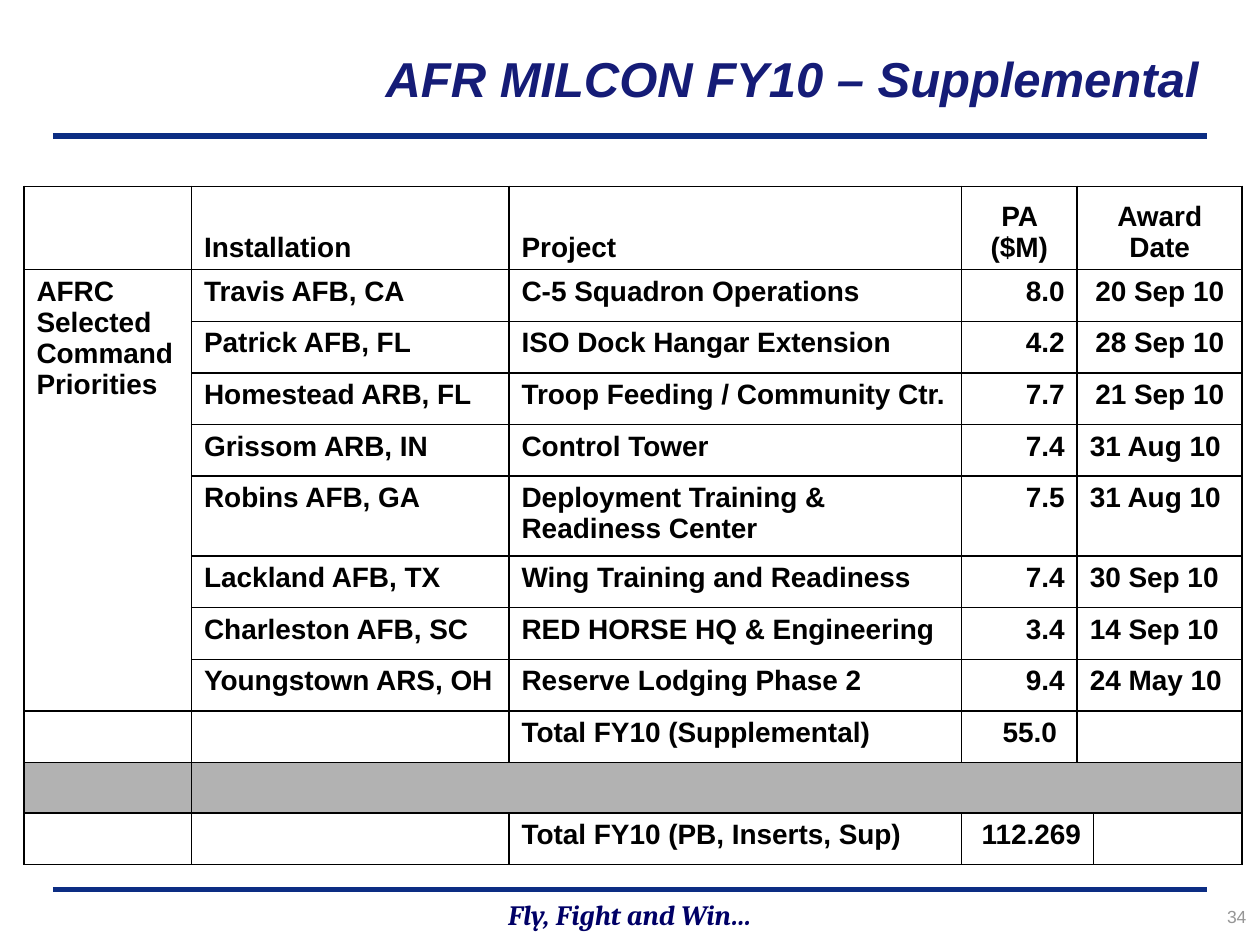
from lxml import etree
from pptx import Presentation
from pptx.dml.color import RGBColor
from pptx.enum.shapes import MSO_CONNECTOR
from pptx.enum.text import MSO_ANCHOR, PP_ALIGN
from pptx.oxml.ns import qn
from pptx.util import Inches, Pt

LEFT, CENTER, RIGHT = PP_ALIGN.LEFT, PP_ALIGN.CENTER, PP_ALIGN.RIGHT
TOP, MIDDLE, BOTTOM = MSO_ANCHOR.TOP, MSO_ANCHOR.MIDDLE, MSO_ANCHOR.BOTTOM

# Content
TITLE = "AFR MILCON FY10 – Supplemental"
MOTTO = "Fly, Fight and Win…"
PAGE_NUMBER = "34"
HEADERS = ["", "Installation", "Project", "PA ($M)", "Award Date"]
PRIORITY_GROUP = "AFRC Selected Command Priorities"
PROJECTS = [
    ("Travis AFB, CA", "C-5 Squadron Operations", "8.0", "20 Sep 10"),
    ("Patrick AFB, FL", "ISO Dock Hangar Extension", "4.2", "28 Sep 10"),
    ("Homestead ARB, FL", "Troop Feeding / Community Ctr.", "7.7", "21 Sep 10"),
    ("Grissom ARB, IN", "Control Tower", "7.4", "31 Aug 10"),
    ("Robins AFB, GA", "Deployment Training & Readiness Center", "7.5", "31 Aug 10"),
    ("Lackland AFB, TX", "Wing Training and Readiness", "7.4", "30 Sep 10"),
    ("Charleston AFB, SC", "RED HORSE HQ & Engineering", "3.4", "14 Sep 10"),
    ("Youngstown ARS, OH", "Reserve Lodging Phase 2", "9.4", "24 May 10"),
]
SUPPLEMENTAL_TOTAL = ("Total FY10 (Supplemental)", "55.0 ")
GRAND_TOTAL = ("Total FY10 (PB, Inserts, Sup)", "112.269 ")
CENTERED_DATES = 3

# Table layout: the last two columns let the grand total run wider
COLUMN_WIDTHS = [1.33, 2.52, 3.59, 0.92, 0.13, 1.18]
HEADER_HEIGHT, ROW_HEIGHT, TALL_HEIGHT, BAND_HEIGHT = 0.66, 0.41, 0.63, 0.37
TALL_ROW = 5
TOTAL_ROW = len(PROJECTS) + 1
BAND_ROW = TOTAL_ROW + 1
GRAND_ROW = BAND_ROW + 1


def color(hex_string):
    return RGBColor.from_string(hex_string)


def format_text(text_frame, text, size, hex_color, align, font="Arial",
                bold=True, italic=False):
    text_frame.text = text
    paragraph = text_frame.paragraphs[0]
    paragraph.alignment = align
    for run in paragraph.runs:
        run.font.name = font
        run.font.size = Pt(size)
        run.font.bold = bold
        run.font.italic = italic
        run.font.color.rgb = color(hex_color)


def add_text(slide, box, anchor, *text_format, **style):
    text_frame = slide.shapes.add_textbox(*map(Inches, box)).text_frame
    text_frame.word_wrap = True
    text_frame.vertical_anchor = anchor
    format_text(text_frame, *text_format, **style)


def add_rule(slide, y):
    rule = slide.shapes.add_connector(
        MSO_CONNECTOR.STRAIGHT, Inches(0.42), Inches(y), Inches(9.58), Inches(y))
    rule.line.color.rgb = color("0C2D83")
    rule.line.width = Pt(3)
    etree.SubElement(rule._element.spPr, qn("a:effectLst"))


def add_borders(cell):
    properties = cell._tc.get_or_add_tcPr()
    for side in ("a:lnL", "a:lnR", "a:lnT", "a:lnB"):
        line = etree.SubElement(properties, qn(side), w=str(Pt(1)))
        fill = etree.SubElement(line, qn("a:solidFill"))
        etree.SubElement(fill, qn("a:srgbClr"), val="000000")


def add_project_table(slide):
    heights = [ROW_HEIGHT] * (GRAND_ROW + 1)
    heights[0], heights[TALL_ROW], heights[BAND_ROW] = (
        HEADER_HEIGHT, TALL_HEIGHT, BAND_HEIGHT)
    table = slide.shapes.add_table(
        len(heights), len(COLUMN_WIDTHS), Inches(0.19), Inches(1.48),
        Inches(sum(COLUMN_WIDTHS)), Inches(sum(heights))).table
    table.first_row = table.horz_banding = False
    for column, width in zip(table.columns, COLUMN_WIDTHS):
        column.width = Inches(width)
    for row, height in zip(table.rows, heights):
        row.height = Inches(height)

    # Borders and fills
    for row_index, row in enumerate(table.rows):
        for cell in row.cells:
            add_borders(cell)
            cell.fill.solid()
            cell.fill.fore_color.rgb = color(
                "B2B2B2" if row_index == BAND_ROW else "FFFFFF")

    # Merged cells
    for row_index in range(BAND_ROW):
        table.cell(row_index, 4).merge(table.cell(row_index, 5))
    table.cell(1, 0).merge(table.cell(len(PROJECTS), 0))
    table.cell(BAND_ROW, 1).merge(table.cell(BAND_ROW, 5))
    table.cell(GRAND_ROW, 3).merge(table.cell(GRAND_ROW, 4))

    # Cell text
    def write(row_index, column_index, text, align=LEFT, anchor=TOP):
        cell = table.cell(row_index, column_index)
        cell.vertical_anchor = anchor
        format_text(cell.text_frame, text, 16, "000000", align)

    for column_index, header in enumerate(HEADERS):
        write(0, column_index, header, CENTER if column_index > 2 else LEFT, BOTTOM)
    write(1, 0, PRIORITY_GROUP)
    for row_index, project in enumerate(PROJECTS, 1):
        date_align = CENTER if row_index <= CENTERED_DATES else LEFT
        aligns = (LEFT, LEFT, RIGHT, date_align)
        for column_index, (text, align) in enumerate(zip(project, aligns), 1):
            write(row_index, column_index, text, align)
    for row_index, (label, amount) in ((TOTAL_ROW, SUPPLEMENTAL_TOTAL),
                                       (GRAND_ROW, GRAND_TOTAL)):
        write(row_index, 2, label)
        write(row_index, 3, amount, RIGHT)


def main():
    presentation = Presentation()
    presentation.slide_width = Inches(10)
    presentation.slide_height = Inches(7.5)
    slide = presentation.slides.add_slide(presentation.slide_layouts[6])

    # Rules, footer and title
    for y in (7.06, 1.08):
        add_rule(slide, y)
    add_text(slide, (0, 7.07, 10, 0.37), MIDDLE, MOTTO, 16, "000066", CENTER,
             font="Cambria", italic=True)
    add_text(slide, (8.74, 7.14, 1.25, 0.33), TOP, PAGE_NUMBER, 10, "969696", RIGHT,
             bold=False)
    add_text(slide, (0.92, 0.17, 8.69, 0.9), MIDDLE, TITLE, 28, "151C77", RIGHT,
             italic=True)

    add_project_table(slide)
    presentation.save("out.pptx")


if __name__ == "__main__":
    main()
